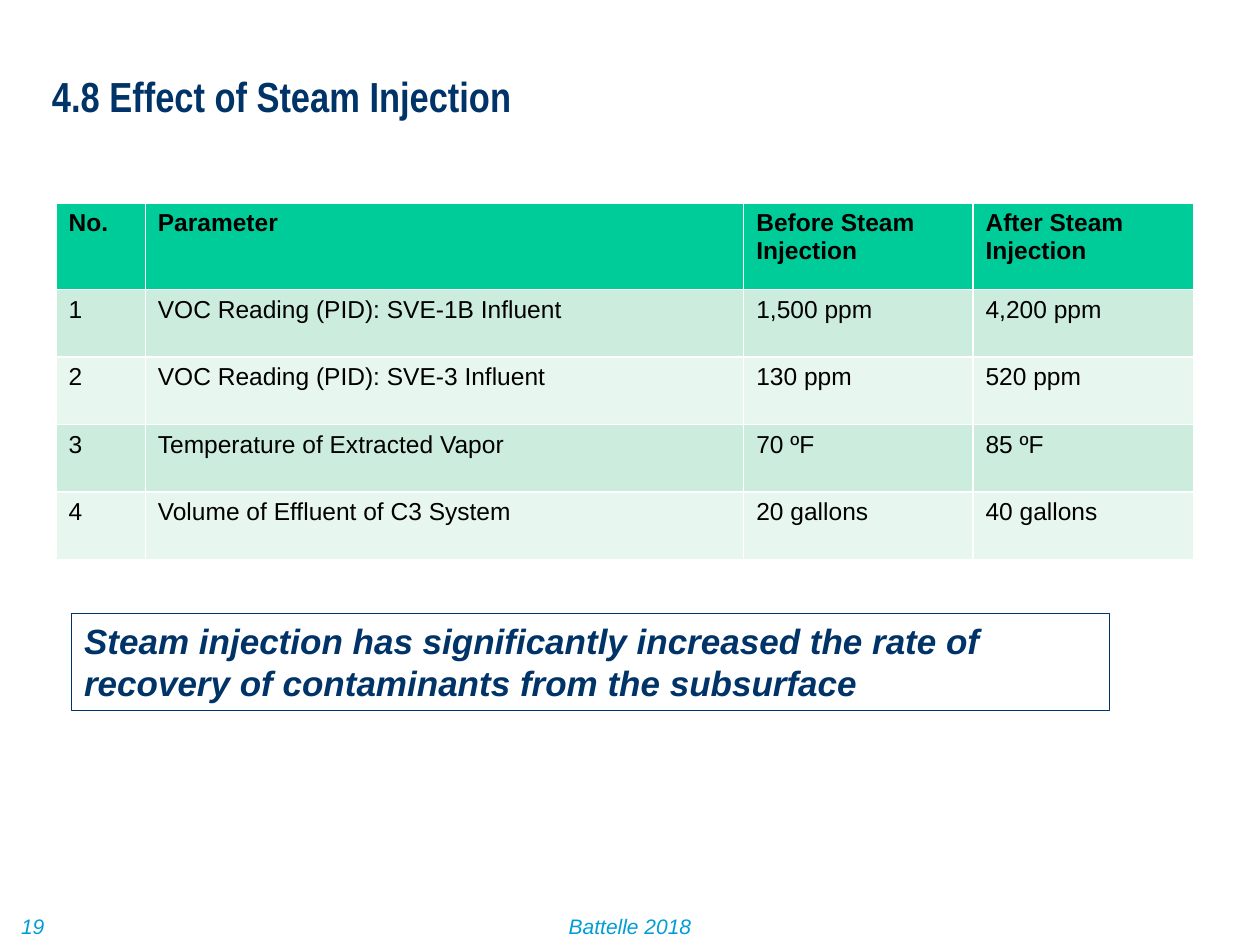
import pptx
import pptx.util
import pptx.dml.color
import pptx.enum.text
from dataclasses import dataclass

Pt = pptx.util.Pt
Align = pptx.enum.text.PP_ALIGN


@dataclass(frozen=True)
class Theme:
    navy: str = "003367"
    sky: str = "009ED5"
    black: str = "000000"
    head: str = "00CC99"
    bands: tuple = ("CCECDE", "E7F6EF")
    sans: str = "Arial"
    slim: str = "Arial Narrow"
    title: int = 24
    note: int = 20
    cell: int = 14
    foot: int = 12


theme = Theme()


def rgb(code):
    return pptx.dml.color.RGBColor.from_string(code)


def write(frame, text, size, color, face=theme.sans, bold=False,
          italic=False, align=Align.LEFT):
    """Fill a text frame with one paragraph in one style."""
    frame.word_wrap = True
    frame.text = text
    para = frame.paragraphs[0]
    para.alignment = align
    font = para.font
    font.name, font.size = face, Pt(size)
    font.bold, font.italic = bold, italic
    font.color.rgb = rgb(color)


deck = pptx.Presentation()
deck.slide_width, deck.slide_height = Pt(720), Pt(540)
slide = deck.slides.add_slide(deck.slide_layouts[5])
shapes = slide.shapes

# Footer
for text, left, width, align in (
    ("19", 5, 77, Align.LEFT),
    ("Battelle 2018", 166.5, 387, Align.CENTER),
):
    box = shapes.add_textbox(Pt(left), Pt(518.5), Pt(width), Pt(24.5))
    write(box.text_frame, text, theme.foot, theme.sky, italic=True, align=align)

# Title
title = shapes.title
title.left, title.top, title.width, title.height = Pt(22.5), Pt(36.5), Pt(280), Pt(36)
write(title.text_frame, "4.8 Effect of Steam Injection", theme.title,
      theme.navy, theme.slim, bold=True)
title.text_frame.word_wrap = False
title.text_frame.auto_size = pptx.enum.text.MSO_AUTO_SIZE.NONE

# Readings; the default table style draws the white rules
rows = (
    ("No.", "Parameter", "Before Steam Injection", "After Steam Injection"),
    ("1", "VOC Reading (PID): SVE-1B Influent", "1,500 ppm", "4,200 ppm"),
    ("2", "VOC Reading (PID): SVE-3 Influent", "130 ppm", "520 ppm"),
    ("3", "Temperature of Extracted Vapor", "70 ºF", "85 ºF"),
    ("4", "Volume of Effluent of C3 System", "20 gallons", "40 gallons"),
)
widths = (51, 342, 131, 126)
heights = [49.5] + [38.6] * 4
table = shapes.add_table(len(rows), len(widths), Pt(32), Pt(116),
                         Pt(sum(widths)), Pt(sum(heights))).table
for col, width in zip(table.columns, widths):
    col.width = Pt(width)
for i, row in enumerate(rows):
    table.rows[i].height = Pt(heights[i])
    fill = theme.bands[(i - 1) % 2] if i else theme.head
    for j, text in enumerate(row):
        cell = table.cell(i, j)
        cell.fill.solid()
        cell.fill.fore_color.rgb = rgb(fill)
        write(cell.text_frame, text, theme.cell, theme.black, bold=i == 0)

# Finding
note = shapes.add_textbox(Pt(41), Pt(350.5), Pt(593), Pt(55.5))
note.line.color.rgb = rgb(theme.navy)
note.line.width = Pt(0.75)
write(note.text_frame,
      "Steam injection has significantly increased the rate of "
      "recovery of contaminants from the subsurface",
      theme.note, theme.navy, bold=True, italic=True)

deck.save("out.pptx")
